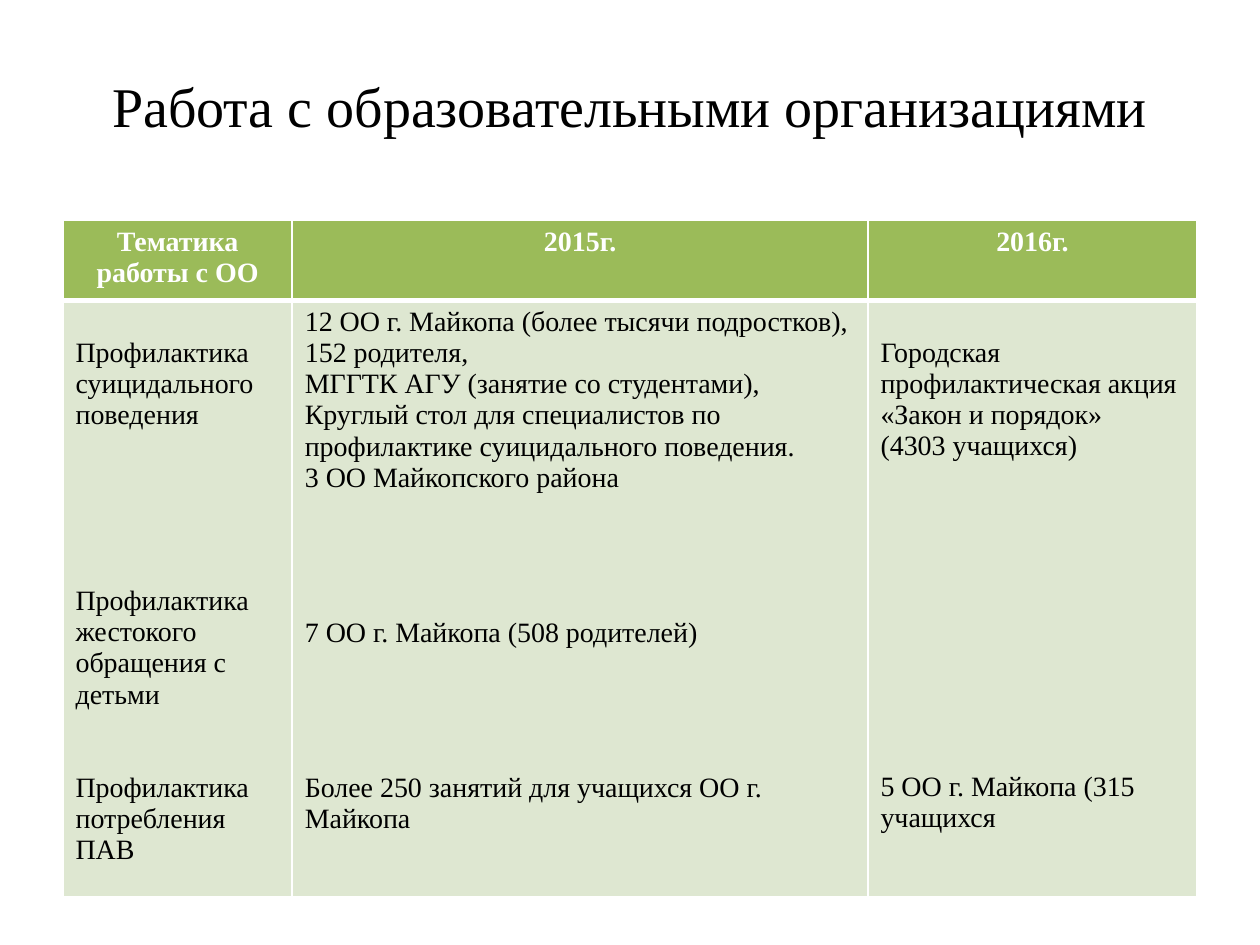
from lxml.etree import SubElement
from pptx import Presentation
from pptx.dml.color import RGBColor
from pptx.enum.text import MSO_ANCHOR, PP_ALIGN
from pptx.oxml.ns import qn
from pptx.util import Pt

FONT = "Times New Roman"
LINE = 17.7  # height of one 16 pt text line
CELL_PAD = 3.6

COLUMN_WIDTHS = [131, 329, 188]
ROW_HEIGHTS = [42.6, 326.8]
HEADINGS = ["Тематика работы с ОО", "2015г.", "2016г."]

# Each entry: free lines above the paragraph, paragraph text
TOPICS = [
    (1, "Профилактика суицидального поведения"),
    (5, "Профилактика жестокого обращения с детьми"),
    (2, "Профилактика потребления ПАВ"),
]
WORK_2015 = [
    (0, "12 ОО г. Майкопа (более тысячи подростков),"),
    (0, "152 родителя,"),
    (0, "МГГТК АГУ (занятие со студентами),"),
    (0, "Круглый стол для специалистов по профилактике суицидального поведения."),
    (0, "3 ОО Майкопского района"),
    (4, "7 ОО г. Майкопа (508 родителей)"),
    (4, "Более 250 занятий для учащихся ОО г. Майкопа"),
]
WORK_2016 = [
    (1, "Городская профилактическая акция «Закон и порядок»"),
    (0, "(4303 учащихся)"),
    (10, "5 ОО г. Майкопа (315 учащихся"),
]


def color(hex_code):
    return RGBColor.from_string(hex_code)


def write(paragraph, text, size, hex_code, bold=False, align=PP_ALIGN.LEFT):
    paragraph.text = text
    paragraph.alignment = align
    font = paragraph.font
    font.name, font.size, font.bold = FONT, Pt(size), bold
    font.color.rgb = color(hex_code)


def style_cell(cell, fill, bottom_width):
    # Borders come before the fill in the cell properties
    properties = cell._tc.get_or_add_tcPr()
    for side, width in (("L", 1), ("R", 1), ("T", 1), ("B", bottom_width)):
        border = SubElement(properties, qn(f"a:ln{side}"), w=str(Pt(width)))
        solid = SubElement(border, qn("a:solidFill"))
        SubElement(solid, qn("a:srgbClr"), val="FFFFFF")
    cell.fill.solid()
    cell.fill.fore_color.rgb = color(fill)


def fill_body_cell(cell, entries):
    frame = cell.text_frame
    for index, (gap, text) in enumerate(entries):
        paragraph = frame.add_paragraph() if index else frame.paragraphs[0]
        write(paragraph, text, 16, "000000")
        if index:
            paragraph.space_before = Pt(gap * LINE)
        else:
            cell.margin_top = Pt(CELL_PAD + gap * LINE)


def add_title(slide, left, top, width, height):
    title = slide.shapes.add_textbox(Pt(left), Pt(top), Pt(width), Pt(height))
    frame = title.text_frame
    frame.word_wrap = True
    frame.vertical_anchor = MSO_ANCHOR.MIDDLE
    write(frame.paragraphs[0], "Работа с образовательными организациями",
          32, "000000", align=PP_ALIGN.CENTER)


def add_work_table(slide, left, top, width, height):
    table = slide.shapes.add_table(
        2, 3, Pt(left), Pt(top), Pt(width), Pt(height)).table
    table.horz_banding = False
    for row, row_height in zip(table.rows, ROW_HEIGHTS):
        row.height = Pt(row_height)
    bodies = [TOPICS, WORK_2015, WORK_2016]
    for index, (heading, entries) in enumerate(zip(HEADINGS, bodies)):
        table.columns[index].width = Pt(COLUMN_WIDTHS[index])
        # Heading row, with a thick rule below
        head = table.cell(0, index)
        style_cell(head, "9BBB59", 3)
        write(head.text_frame.paragraphs[0], heading, 16, "FFFFFF",
              bold=True, align=PP_ALIGN.CENTER)
        # Body row; its top edge matches the thick rule
        body = table.cell(1, index)
        style_cell(body, "DEE7D1", 1)
        body._tc.tcPr.find(qn("a:lnT")).set("w", str(Pt(3)))
        fill_body_cell(body, entries)


def main():
    deck = Presentation()
    deck.slide_width, deck.slide_height = Pt(720), Pt(540)
    slide = deck.slides.add_slide(deck.slide_layouts[6])
    add_title(slide, 36, 15, 648, 90)
    add_work_table(slide, 36, 126, sum(COLUMN_WIDTHS), sum(ROW_HEIGHTS))
    deck.save("out.pptx")


if __name__ == "__main__":
    main()
